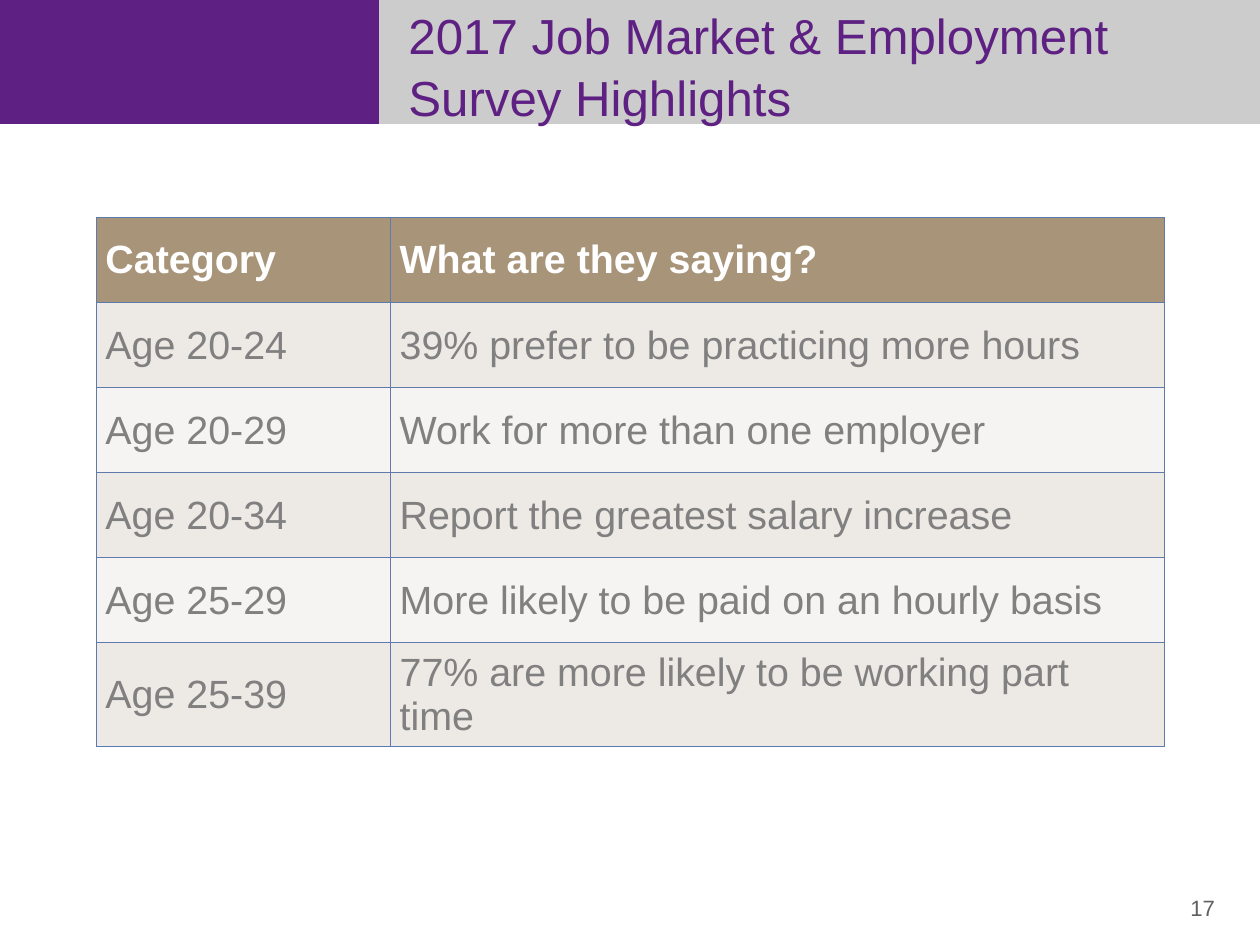
from dataclasses import dataclass

from lxml.etree import SubElement
from pptx import Presentation
from pptx.dml.color import RGBColor
from pptx.enum.shapes import MSO_SHAPE
from pptx.enum.text import MSO_ANCHOR, PP_ALIGN
from pptx.oxml.ns import qn
from pptx.util import Pt

EMU_PER_PX = 9144  # 100 px to the inch
PAGE_WIDTH, PAGE_HEIGHT = 1422, 1067


@dataclass(frozen=True)
class Theme:
    font: str = "Arial"
    purple: str = "5E2082"
    gray: str = "CCCCCC"
    number: str = "606060"
    header_fill: str = "A79479"
    header_text: str = "FFFFFF"
    cell_text: str = "808080"
    row_fills: tuple = ("EDE9E5", "F6F4F2")
    border: str = "5F7BAE"
    title_size: int = 40
    table_size: int = 32
    number_size: int = 18


THEME = Theme()

SURVEY_ROWS = [
    ("Category", "What are they saying?"),
    ("Age 20-24", "39% prefer to be practicing more hours"),
    ("Age 20-29", "Work for more than one employer"),
    ("Age 20-34", "Report the greatest salary increase"),
    ("Age 25-29", "More likely to be paid on an hourly basis"),
    ("Age 25-39", "77% are more likely to be working part time"),
]


def px(length):
    return length * EMU_PER_PX


def to_emu(*lengths):
    return [px(length) for length in lengths]


def style(para, size, color, bold=False, align=PP_ALIGN.LEFT):
    para.alignment = align
    para.font.name = THEME.font
    para.font.size = Pt(size)
    para.font.bold = bold
    para.font.color.rgb = RGBColor.from_string(color)


def add_band(page, left, top, width, height, color):
    band = page.shapes.add_shape(MSO_SHAPE.RECTANGLE, *to_emu(left, top, width, height))
    band.shadow.inherit = False
    band.fill.solid()
    band.fill.fore_color.rgb = RGBColor.from_string(color)
    band.line.fill.background()


def add_header(page, left, top, width, height, text):
    # Purple block and gray title band
    block_width = 428
    add_band(page, left, top, block_width, height, THEME.purple)
    add_band(page, left + block_width, top, width - block_width, height, THEME.gray)

    # Title, brought in front of the bands
    title = page.shapes.title
    page.shapes._spTree.append(title._element)
    title.left, title.top, title.width, title.height = to_emu(
        left + block_width + 23, top + 29, 900, 87)
    frame = title.text_frame
    frame.text = text
    frame.word_wrap = True
    frame.vertical_anchor = MSO_ANCHOR.MIDDLE
    frame.margin_left = frame.margin_right = px(10)
    frame.margin_top = frame.margin_bottom = px(5)
    para = frame.paragraphs[0]
    para.line_spacing = 1.05
    style(para, THEME.title_size, THEME.purple)


def add_borders(cell):
    properties = cell._tc.get_or_add_tcPr()
    for side in ("a:lnL", "a:lnR", "a:lnT", "a:lnB"):
        line = SubElement(properties, qn(side), w=str(Pt(1)))
        fill = SubElement(line, qn("a:solidFill"))
        SubElement(fill, qn("a:srgbClr"), val=THEME.border)


def add_survey_table(page, left, top, width, row_height, rows):
    frame = page.shapes.add_table(
        len(rows), 2, *to_emu(left, top, width, row_height * len(rows)))
    table = frame.table
    category_width = 332
    table.columns[0].width = px(category_width)
    table.columns[1].width = px(width - category_width)

    for row_index, texts in enumerate(rows):
        table.rows[row_index].height = px(row_height)
        is_header = row_index == 0
        fill = THEME.header_fill if is_header else THEME.row_fills[(row_index - 1) % 2]
        color = THEME.header_text if is_header else THEME.cell_text
        for column_index, text in enumerate(texts):
            cell = table.cell(row_index, column_index)
            cell.text = text
            cell.vertical_anchor = MSO_ANCHOR.MIDDLE
            add_borders(cell)
            cell.fill.solid()
            cell.fill.fore_color.rgb = RGBColor.from_string(fill)
            style(cell.text_frame.paragraphs[0], THEME.table_size, color, is_header)


def add_page_number(page, left, top, width, height, number):
    box = page.shapes.add_textbox(*to_emu(left, top, width, height))
    box.text_frame.word_wrap = True
    box.text_frame.text = number
    style(box.text_frame.paragraphs[0], THEME.number_size, THEME.number,
          align=PP_ALIGN.RIGHT)


def main():
    deck = Presentation()
    deck.slide_width, deck.slide_height = to_emu(PAGE_WIDTH, PAGE_HEIGHT)
    page = deck.slides.add_slide(deck.slide_layouts[5])
    add_header(page, 0, 0, PAGE_WIDTH, 140,
               "2017 Job Market & Employment Survey Highlights")
    add_page_number(page, 1310, 1005, 71, 40, "17")
    add_survey_table(page, 109, 246, 1205, 96, SURVEY_ROWS)
    deck.save("out.pptx")


if __name__ == "__main__":
    main()
